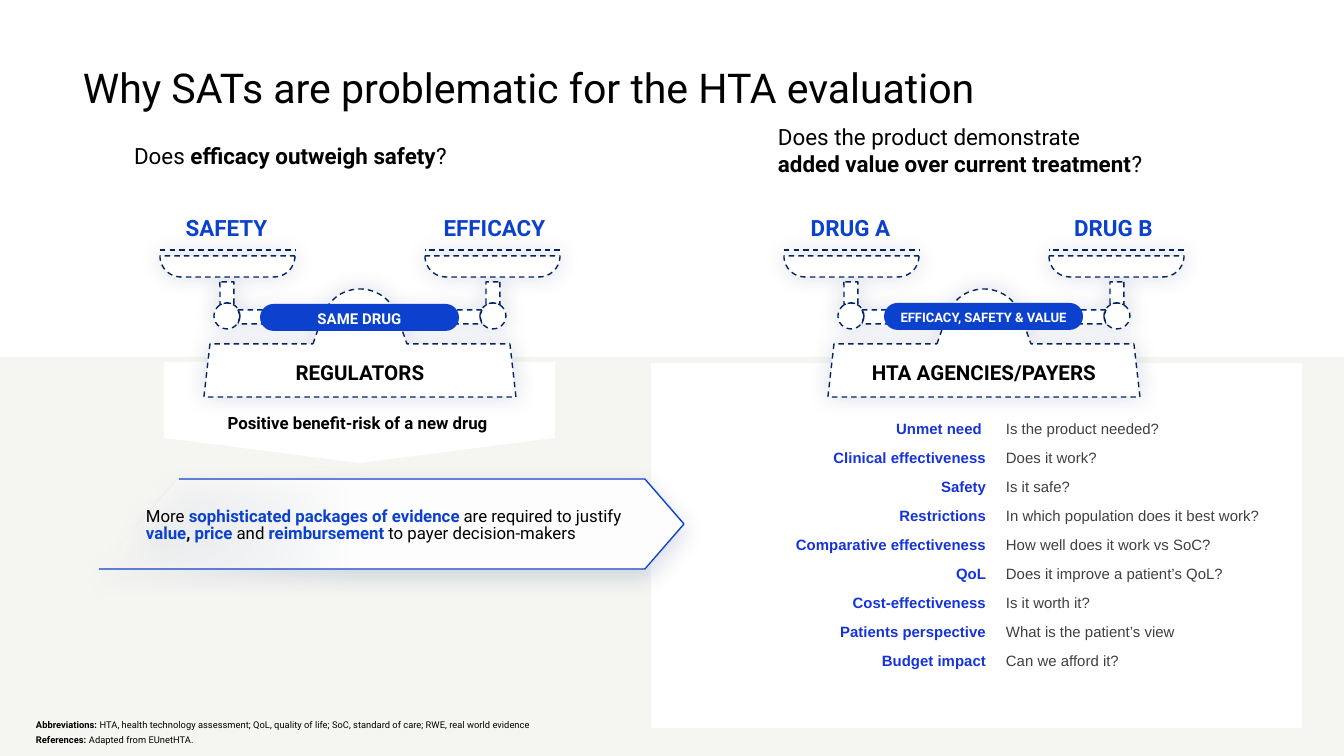
import math

import lxml.etree
import pptx
import pptx.dml.color
import pptx.enum.dml
import pptx.enum.shapes
import pptx.enum.text
import pptx.oxml.ns
import pptx.util

EMU_PER_PX = 914400 / 134.4
COLORS = {
    "blue": "0B41CD", "navy": "022366", "label": "1533D8", "answer": "3F3F3F",
    "band": "F5F5F2", "white": "FFFFFF", "black": "000000",
}
SHAPES = pptx.enum.shapes.MSO_SHAPE
ALIGN = pptx.enum.text.PP_ALIGN
ANCHOR = pptx.enum.text.MSO_ANCHOR
CRITERIA = [
    ("Unmet need ", "Is the product needed?"),
    ("Clinical effectiveness", "Does it work?"),
    ("Safety", "Is it safe?"),
    ("Restrictions", "In which population does it best work?"),
    ("Comparative effectiveness", "How well does it work vs SoC?"),
    ("QoL", "Does it improve a patient’s QoL?"),
    ("Cost-effectiveness", "Is it worth it?"),
    ("Patients perspective", "What is the patient’s view"),
    ("Budget impact", "Can we afford it?"),
]


def px(value):
    return pptx.util.Emu(round(value * EMU_PER_PX))


def rgb(name):
    return pptx.dml.color.RGBColor.from_string(COLORS[name])


def arc(x, y, radius, start, end, steps=24):
    angles = [math.radians(start + (end - start) * i / steps) for i in range(steps + 1)]
    return [(x + radius * math.cos(a), y + radius * math.sin(a)) for a in angles]


def mirror(points, width):
    return [(width - x, y) for x, y in points]


def scale_contours():
    side = [
        (arc(114, 6, 21, 0, 90) + arc(21, 6, 21, 90, 180), True),
        (arc(67, 66, 13, 0, 360), True),
        ([(0, 0), (135, 0)], False),
        ([(60, 32)] + arc(67, 66, 13, 238, 302) + [(74, 32)], True),
        ([(78, 60), (164, 60), (160, 74), (78, 74), (80, 66)], True),
    ]
    base = [(153, 94)] + arc(200, 78, 39, 198, 342)
    base += [(247, 94), (350, 94), (356, 147), (44, 147), (50, 94)]
    return side + [(mirror(points, 400), closed) for points, closed in side] + [(base, True)]


class SlideBuilder:
    font = "Roboto"

    def __init__(self, page):
        self.page = page

    def set_text(self, frame, paragraphs, size, insets=(0, 0, 0, 0), align=ALIGN.LEFT,
                 anchor=ANCHOR.TOP, spacing=None, space_before=0):
        frame.word_wrap = True
        frame.vertical_anchor = anchor
        frame.margin_left, frame.margin_top, frame.margin_right, frame.margin_bottom = map(px, insets)
        for index, spans in enumerate(paragraphs):
            para = frame.add_paragraph() if index else frame.paragraphs[0]
            para.alignment = align
            if spacing:
                para.line_spacing = spacing
            if index and space_before:
                para.space_before = pptx.util.Pt(space_before)
            for text, color, bold in spans:
                if text == "\n":
                    para.add_line_break()
                    continue
                span = para.add_run()
                span.text = text
                self.style_span(span, self.font, size, color, bold)

    def style_span(self, span, font, size, color, bold):
        span.font.name = font
        span.font.size = pptx.util.Pt(size)
        span.font.bold = bold
        span.font.color.rgb = rgb(color)

    def text(self, left, top, width, height, paragraphs, size, **style):
        box = self.page.shapes.add_textbox(px(left), px(top), px(width), px(height))
        self.set_text(box.text_frame, paragraphs, size, **style)

    def shape(self, kind, left, top, width, height, fill, adjustments=()):
        box = self.page.shapes.add_shape(kind, px(left), px(top), px(width), px(height))
        box.shadow.inherit = False
        box.fill.solid()
        box.fill.fore_color.rgb = rgb(fill)
        box.line.fill.background()
        for index, value in enumerate(adjustments):
            box.adjustments[index] = value
        return box

    def outline(self, left, top, contours, line, distance=0):
        builder = None
        for points, closed in contours:
            points = [(px(x), px(y)) for x, y in points]
            if builder is None:
                builder = self.page.shapes.build_freeform(*points[0])
            else:
                builder.move_to(*points[0])
            builder.add_line_segments(points[1:], close=closed)
        box = builder.convert_to_shape(px(left), px(top))
        box.fill.solid()
        box.fill.fore_color.rgb = rgb("white")
        box.line.color.rgb = rgb(line)
        box.line.width = pptx.util.Pt(0.75)
        self.cast_shadow(box, distance)
        return box

    def cast_shadow(self, box, distance):
        qn = pptx.oxml.ns.qn
        box.shadow.inherit = False
        effects = box._element.spPr.find(qn("a:effectLst"))
        shadow = lxml.etree.SubElement(
            effects, qn("a:outerShdw"), blurRad=str(pptx.util.Pt(12)),
            dist=str(pptx.util.Pt(distance)), dir="5400000" if distance else "0",
            algn="ctr", rotWithShape="0")
        color = lxml.etree.SubElement(shadow, qn("a:srgbClr"), val=COLORS["navy"])
        lxml.etree.SubElement(color, qn("a:alpha"), val="15000")

    def fade_left(self, box):
        qn = pptx.oxml.ns.qn
        box.fill.gradient()
        box.fill.gradient_angle = 180
        for stop, position in zip(box.fill.gradient_stops, (0.56, 1)):
            stop.color.rgb = rgb("white")
            stop.position = position
        color = box._element.spPr.findall(".//" + qn("a:gs"))[-1].find(qn("a:srgbClr"))
        lxml.etree.SubElement(color, qn("a:alpha"), val="0")

    def scale(self, left, labels, right_label, caption, pill, pill_size, pill_top):
        base = self.outline(left, 250, scale_contours(), "navy")
        base.line.dash_style = pptx.enum.dml.MSO_LINE.DASH
        self.set_text(base.text_frame, [[(caption, "black", True)]], 11, insets=(9, 5, 9, 12),
                      align=ALIGN.CENTER, anchor=ANCHOR.BOTTOM)
        for label, offset in zip(labels, (0, right_label)):
            self.text(left + offset, 216, 133, 27, [[(label, "blue", True)]], 12,
                      insets=(9, 9, 9, 9), align=ALIGN.CENTER, anchor=ANCHOR.MIDDLE, spacing=0.9)
        beam = self.shape(SHAPES.ROUNDED_RECTANGLE, left + 100, pill_top, 199, 27, "blue", [0.5])
        self.set_text(beam.text_frame, [[(pill, "white", True)]], pill_size, insets=(0, 4, 0, 0),
                      align=ALIGN.CENTER, anchor=ANCHOR.MIDDLE, spacing=0.9)

    def table(self, left, top, columns, rows, content):
        frame = self.page.shapes.add_table(
            len(rows), len(columns), px(left), px(top), px(sum(columns)), px(sum(rows)))
        grid = frame.table
        grid.first_row = grid.horz_banding = False
        for column, width in zip(grid.columns, columns):
            column.width = px(width)
        for row, height in zip(grid.rows, rows):
            row.height = px(height)
        styles = [("label", True, ALIGN.RIGHT), ("answer", False, ALIGN.LEFT)]
        for row, texts in zip(grid.rows, content):
            for cell, text, (color, bold, align) in zip(row.cells, texts, styles):
                cell.fill.solid()
                cell.fill.fore_color.rgb = rgb("white")
                cell.margin_left = cell.margin_right = px(10)
                cell.margin_top = cell.margin_bottom = 0
                cell.vertical_anchor = ANCHOR.MIDDLE
                para = cell.text_frame.paragraphs[0]
                para.text = text
                para.alignment = align
                for span in para.runs:
                    self.style_span(span, "Arial", 8, color, bold)


def main():
    deck = pptx.Presentation()
    deck.slide_width, deck.slide_height = px(1344), px(756)
    slide = SlideBuilder(deck.slides.add_slide(deck.slide_layouts[6]))

    slide.shape(SHAPES.RECTANGLE, 0, 357, 1344, 399, "band")
    verdict = slide.shape(SHAPES.DOWN_ARROW, 164, 362, 391, 101, "white", [1, 0.248])
    slide.set_text(verdict.text_frame, [[("Positive benefit-risk of a new drug ", "black", True)]], 9,
                   insets=(9, 5, 9, 5), align=ALIGN.CENTER, anchor=ANCHOR.BOTTOM)
    slide.text(36, 722, 1270, 35, [
        [("Abbreviations: ", "black", True),
         ("HTA, health technology assessment; QoL, quality of life; SoC, standard of care; "
          "RWE, real world evidence", "black", False)],
        [("References: ", "black", True), ("Adapted from EUnetHTA.", "black", False)],
    ], 5, insets=(0, 0, 0, 12), anchor=ANCHOR.BOTTOM, space_before=2)
    slide.text(121, 135, 417, 38, [
        [("Does ", "black", False), ("efficacy outweigh safety", "black", True), ("?", "black", False)],
    ], 12, insets=(13, 7, 13, 7))

    slide.table(652, 364, [344, 305], [51] + [29] * 9 + [51], [("", "")] + CRITERIA + [("", "")])

    banner = slide.outline(
        0, 0, [([(179, 479), (645, 479), (684, 524), (645, 569), (99, 569)], False)], "blue", 4)
    slide.fade_left(banner)
    slide.set_text(banner.text_frame, [[
        ("More ", "black", False), ("sophisticated packages of evidence ", "blue", True),
        ("are required to justify", "black", False), ("\n", "black", False),
        ("value", "blue", True), (", ", "black", True), ("price ", "blue", True),
        ("and ", "black", False), ("reimbursement ", "blue", True),
        ("to payer decision-makers", "black", False),
    ]], 9, insets=(47, 4, 9, 0), anchor=ANCHOR.MIDDLE, spacing=0.85)

    slide.text(765, 116, 427, 56, [[
        ("Does the product demonstrate", "black", False), ("\n", "black", False),
        ("added value over current treatment", "black", True), ("?", "black", False),
    ]], 12, insets=(13, 7, 13, 7))
    slide.scale(784, ("DRUG A", "DRUG B"), 263, "HTA AGENCIES/PAYERS",
                "EFFICACY, SAFETY & VALUE", 7, 303)
    slide.scale(160, ("SAFETY", "EFFICACY"), 268, "REGULATORS", "SAME DRUG", 8, 304)
    slide.text(83, 63, 1093, 56,
               [[("Why SATs are problematic for the HTA evaluation", "black", False)]], 22,
               insets=(0, 5, 9, 5), spacing=0.9)
    deck.save("out.pptx")


if __name__ == "__main__":
    main()
